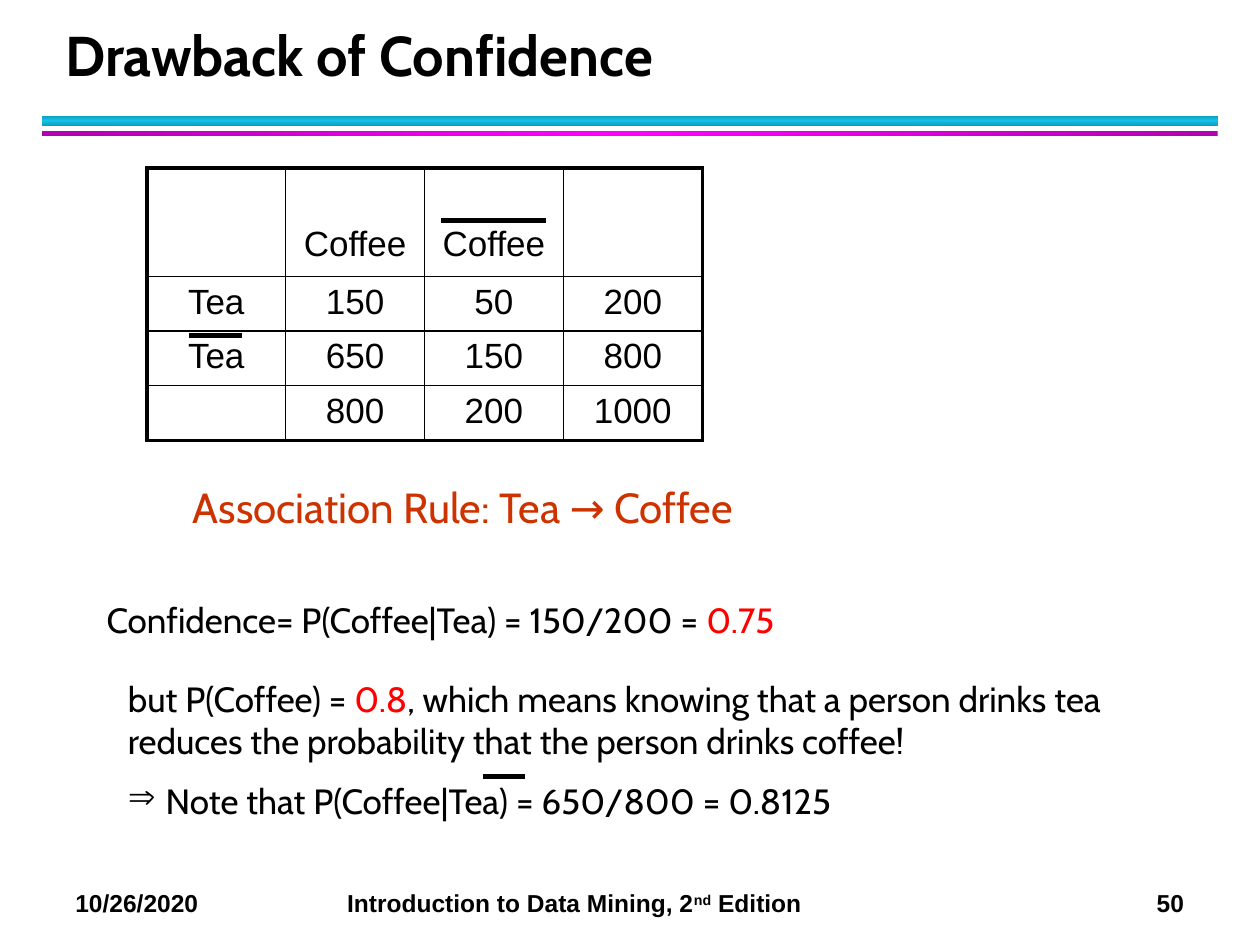
from copy import deepcopy
from pptx import Presentation, util as u
from pptx.dml.color import RGBColor
from pptx.enum import shapes, text
from pptx.oxml import parse_xml
from pptx.oxml.ns import nsdecls, qn


def rgb(value):
    return RGBColor.from_string(value)


class Painter:
    black, red, rust = "000000", "FF0000", "CC3300"
    heading_font, table_font = "Cabin", "Arial"

    def __init__(self, page):
        self.page = page

    def frame(self, left, top, width, height):
        return u.Cm(left), u.Cm(top), u.Cm(width), u.Cm(height)

    def span(self, para, words, size=20, color=black, font=heading_font, bold=False):
        span = para.add_run()
        span.text = words
        span.font.size = u.Pt(size)
        span.font.name = font
        span.font.bold = bold
        span.font.color.rgb = rgb(color)
        return span

    def title(self, words, *place):
        box = self.page.shapes.title
        box.left, box.top, box.width, box.height = self.frame(*place)
        box.text_frame.auto_size = text.MSO_AUTO_SIZE.NONE
        box.text_frame.vertical_anchor = text.MSO_ANCHOR.BOTTOM
        para = box.text_frame.paragraphs[0]
        para.alignment = text.PP_ALIGN.LEFT
        para.line_spacing = u.Pt(36)
        self.span(para, words, 32, bold=True)

    def bar(self, edge, middle, angle, *place):
        bar = self.page.shapes.add_shape(shapes.MSO_SHAPE.RECTANGLE, *self.frame(*place))
        bar.shadow.inherit = False
        bar.line.fill.background()
        bar.fill.gradient()
        bar.fill.gradient_angle = angle
        stops = bar.element.find(".//" + qn("a:gsLst"))
        stops.append(deepcopy(stops[0]))
        for index, (stop, color) in enumerate(zip(bar.fill.gradient_stops, (edge, middle, edge))):
            stop.position = index / 2
            stop.color.rgb = rgb(color)

    def text_box(self, *place):
        box = self.page.shapes.add_textbox(*self.frame(*place))
        box.text_frame.word_wrap = True
        return box.text_frame

    def overline(self, left, top, width):
        line = self.page.shapes.add_connector(
            shapes.MSO_CONNECTOR.STRAIGHT, u.Cm(left), u.Cm(top), u.Cm(left + width), u.Cm(top))
        line.line.width = u.Pt(3)
        line.line.color.rgb = rgb(self.black)
        line.element.spPr.append(parse_xml(f"<a:effectLst {nsdecls('a')}/>"))

    def borders(self, cell, widths):
        properties = cell._tc.get_or_add_tcPr()
        for index, (side, width) in enumerate(zip("LRTB", widths)):
            properties.insert(index, parse_xml(
                f'<a:ln{side} {nsdecls("a")} w="{u.Pt(width)}"><a:solidFill>'
                f'<a:srgbClr val="{self.black}"/></a:solidFill></a:ln{side}>'))

    def table(self, rows, heights, column_width, left, top):
        last_row, last_column = len(rows) - 1, len(rows[0]) - 1
        place = self.frame(left, top, column_width * len(rows[0]), sum(heights))
        table = self.page.shapes.add_table(len(rows), len(rows[0]), *place).table
        table.first_row = table.horz_banding = False
        for column in table.columns:
            column.width = u.Cm(column_width)
        for r, (row, height) in enumerate(zip(rows, heights)):
            table.rows[r].height = u.Cm(height)
            for c, words in enumerate(row):
                cell = table.cell(r, c)
                cell.fill.background()
                outer = (c == 0, c == last_column, r == 0, r == last_row)
                self.borders(cell, [2.25 if edge else 1 for edge in outer])
                if r == 0:
                    cell.vertical_anchor = text.MSO_ANCHOR.BOTTOM
                    cell.margin_bottom = u.Cm(0.25)
                if words:
                    para = cell.text_frame.paragraphs[0]
                    para.alignment = text.PP_ALIGN.CENTER
                    self.span(para, words, font=self.table_font)

    def footer(self, date, book, number, *place):
        para = self.text_box(*place).paragraphs[0]
        para._p.get_or_add_pPr().append(parse_xml(
            f'<a:tabLst {nsdecls("a")}><a:tab pos="{u.Cm(5.48)}" algn="l"/>'
            f'<a:tab pos="{u.Cm(22.35)}" algn="r"/></a:tabLst>'))
        start, raised, end = book
        for words in (f"{date}\t{start}", raised, f"{end}\t{number}"):
            span = self.span(para, words, 14, font=self.table_font, bold=True)
            if words == raised:
                span._r.get_or_add_rPr().set("baseline", "30000")

    def indent(self, para, left, first=0, bullet=None):
        properties = para._p.get_or_add_pPr()
        properties.set("marL", str(u.Cm(left)))
        properties.set("indent", str(u.Cm(first)))
        if bullet:
            properties.append(parse_xml(f'<a:buChar {nsdecls("a")} char="{bullet}"/>'))


def main():
    deck = Presentation()
    deck.slide_width, deck.slide_height = u.Cm(25.4), u.Cm(19.05)
    paint = Painter(deck.slides.add_slide(deck.slide_layouts[5]))

    paint.bar("0E9BBA", "12C2E9", 90, 0.85, 2.33, 23.7, 0.21)
    paint.bar("B200B2", "FF00FF", 0, 0.85, 2.64, 23.7, 0.11)
    paint.footer("10/26/2020", ("Introduction to Data Mining, 2", "nd", " Edition"), 50,
                 1.27, 17.78, 23.7, 0.87)
    paint.title("Drawback of Confidence", 1.06, 0.42, 23, 1.47)

    paint.table([("", "Coffee", "Coffee", ""),
                 ("Tea", "150", "50", "200"),
                 ("Tea", "650", "150", "800"),
                 ("", "800", "200", "1000")],
                (2.18, 1.1, 1.1, 1.1), 2.8, 2.96, 3.39)
    paint.overline(8.89, 4.45, 2.11)
    paint.overline(3.81, 6.77, 1.06)

    rule = paint.text_box(1.9, 9.58, 20.53, 3.58)
    para = rule.paragraphs[0]
    paint.indent(para, 1.74)
    paint.span(para, "Association Rule: Tea → Coffee", 24, paint.rust)
    para = rule.add_paragraph()
    para.space_before = u.Pt(38)
    paint.span(para, "Confidence= P(Coffee|Tea) = 150/200 = ")
    paint.span(para, "0.75", color=paint.red)

    paint.overline(9.74, 15.66, 0.85)
    remark = paint.text_box(2.33, 13.54, 20.53, 3.23)
    para = remark.paragraphs[0]
    paint.span(para, "but P(Coffee) = ")
    paint.span(para, "0.8", color=paint.red)
    paint.span(para, ", which means knowing that a person drinks tea "
                     "reduces the probability that the person drinks coffee!")
    para = remark.add_paragraph()
    para.space_before = u.Pt(10)
    paint.indent(para, 0.76, -0.76, "⇒")
    paint.span(para, "Note that P(Coffee|Tea) = 650/800 = 0.8125")

    deck.save("out.pptx")


if __name__ == "__main__":
    main()
